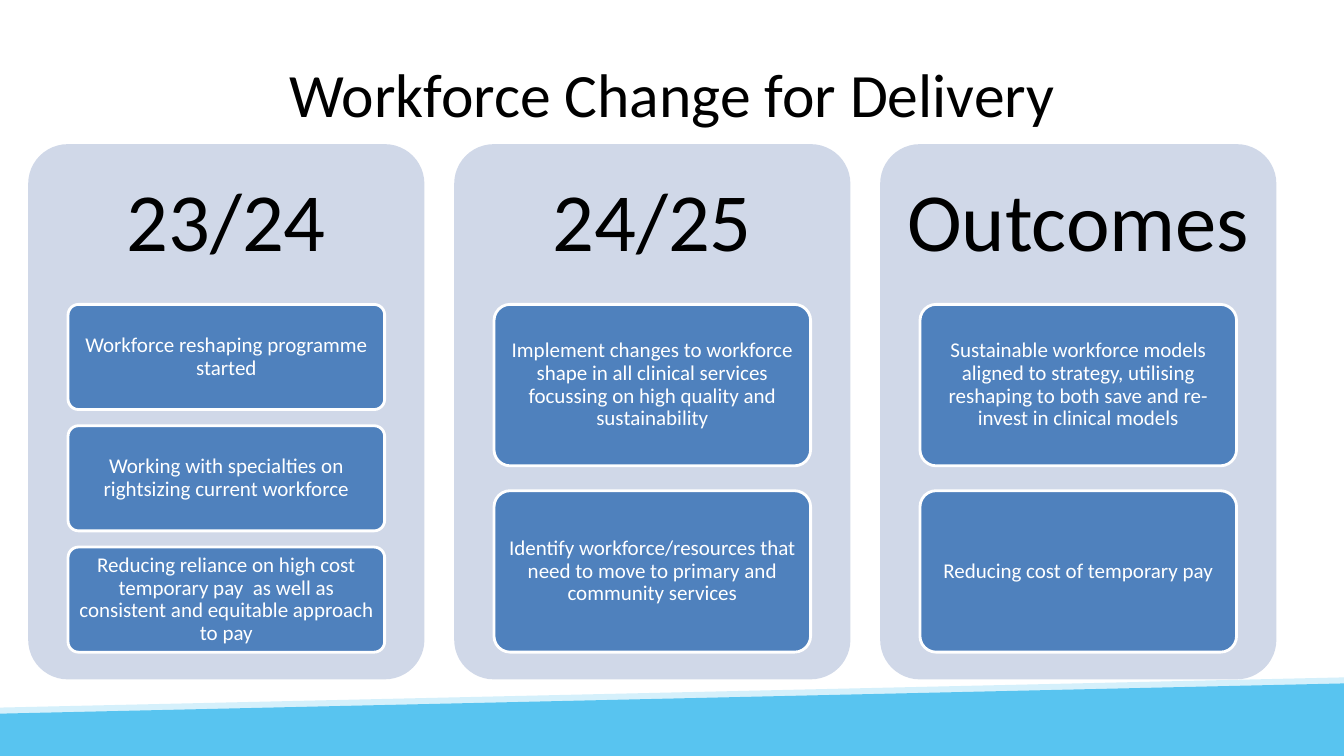
"""Build the Workforce Change for Delivery slide."""
from pptx import Presentation
from pptx.dml.color import RGBColor
from pptx.enum.shapes import MSO_SHAPE as Shape
from pptx.enum.text import MSO_ANCHOR as Anchor, PP_ALIGN as Align
from pptx.util import Inches, Pt


def paint(color_format, hex_color):
    color_format.rgb = RGBColor.from_string(hex_color)


def write(shape, text, size, hex_color, inset_x, inset_y, spacing):
    frame = shape.text_frame
    paragraph = frame.paragraphs[0]
    paragraph.text = text
    formats = {
        frame: {
            "word_wrap": True, "vertical_anchor": Anchor.MIDDLE,
            "margin_left": Inches(inset_x), "margin_right": Inches(inset_x),
            "margin_top": Inches(inset_y), "margin_bottom": Inches(inset_y),
        },
        paragraph: {"alignment": Align.CENTER, "line_spacing": spacing},
        paragraph.runs[0].font: {"name": "Calibri", "size": Pt(size)},
    }
    for target, values in formats.items():
        for name, value in values.items():
            setattr(target, name, value)
    paint(paragraph.runs[0].font.color, hex_color)


PANEL_TOP, PANEL_WIDTH, PANEL_HEIGHT = 1.43, 3.93, 5.31
PANEL_LEFT, PANEL_PITCH = 0.28, 4.225
HEADING_HEIGHT = 1.59
CARD_TOP, CARD_WIDTH, STACK_HEIGHT = 3.02, 3.14, 3.45
CARD_INDENT = (PANEL_WIDTH - CARD_WIDTH) / 2
GAP_RATIO = 0.154

COLUMNS = [
    ("23/24", [
        "Workforce reshaping programme started",
        "Working with specialties on rightsizing current workforce",
        "Reducing reliance on high cost temporary pay  as well as "
        "consistent and equitable approach to pay",
    ]),
    ("24/25", [
        "Implement changes to workforce shape in all clinical services "
        "focussing on high quality and sustainability",
        "Identify workforce/resources that need to move to primary and "
        "community services",
    ]),
    ("Outcomes", [
        "Sustainable workforce models aligned to strategy, utilising "
        "reshaping to both save and re-invest in clinical models",
        "Reducing cost of temporary pay",
    ]),
]

deck = Presentation()
deck.slide_width, deck.slide_height = Inches(13.33), Inches(7.5)
slide = deck.slides.add_slide(deck.slide_layouts[6])
shapes = slide.shapes

for left_y, right_y, band_color in [(7.02, 6.72, "D5F0FB"), (7.08, 6.78, "58C4F0")]:
    outline = shapes.build_freeform(Inches(0), Inches(left_y))
    corners = [(13.33, right_y), (13.33, 7.5), (0, 7.5)]
    outline.add_line_segments([(Inches(x), Inches(y)) for x, y in corners])
    band = outline.convert_to_shape()
    band.shadow.inherit = False
    band.fill.solid()
    paint(band.fill.fore_color, band_color)
    band.line.fill.background()

title = shapes.add_textbox(Inches(0.67), Inches(0.3), Inches(12), Inches(1.25))
write(title, "Workforce Change for Delivery", 44, "000000", 0.1, 0.05, 1.0)

for column, (period, actions) in enumerate(COLUMNS):
    left = PANEL_LEFT + column * PANEL_PITCH
    panel = shapes.add_shape(Shape.ROUNDED_RECTANGLE, Inches(left), Inches(PANEL_TOP),
                             Inches(PANEL_WIDTH), Inches(PANEL_HEIGHT))
    panel.adjustments[0] = 0.1
    panel.shadow.inherit = False
    panel.fill.solid()
    paint(panel.fill.fore_color, "D0D8E8")
    panel.line.fill.background()

    heading = shapes.add_textbox(Inches(left), Inches(PANEL_TOP),
                                 Inches(PANEL_WIDTH), Inches(HEADING_HEIGHT))
    write(heading, period, 59, "000000", 0.25, 0.25, 0.9)

    card_height = STACK_HEIGHT / (len(actions) + (len(actions) - 1) * GAP_RATIO)
    for row, action in enumerate(actions):
        top = CARD_TOP + row * card_height * (1 + GAP_RATIO)
        card = shapes.add_shape(Shape.ROUNDED_RECTANGLE, Inches(left + CARD_INDENT),
                                Inches(top), Inches(CARD_WIDTH), Inches(card_height))
        card.adjustments[0] = 0.1
        card.shadow.inherit = False
        card.fill.solid()
        paint(card.fill.fore_color, "4F81BD")
        paint(card.line.color, "FFFFFF")
        card.line.width = Pt(2)
        write(card, action, 15, "FFFFFF", 0.04, 0.03, 0.9)

deck.save("out.pptx")
